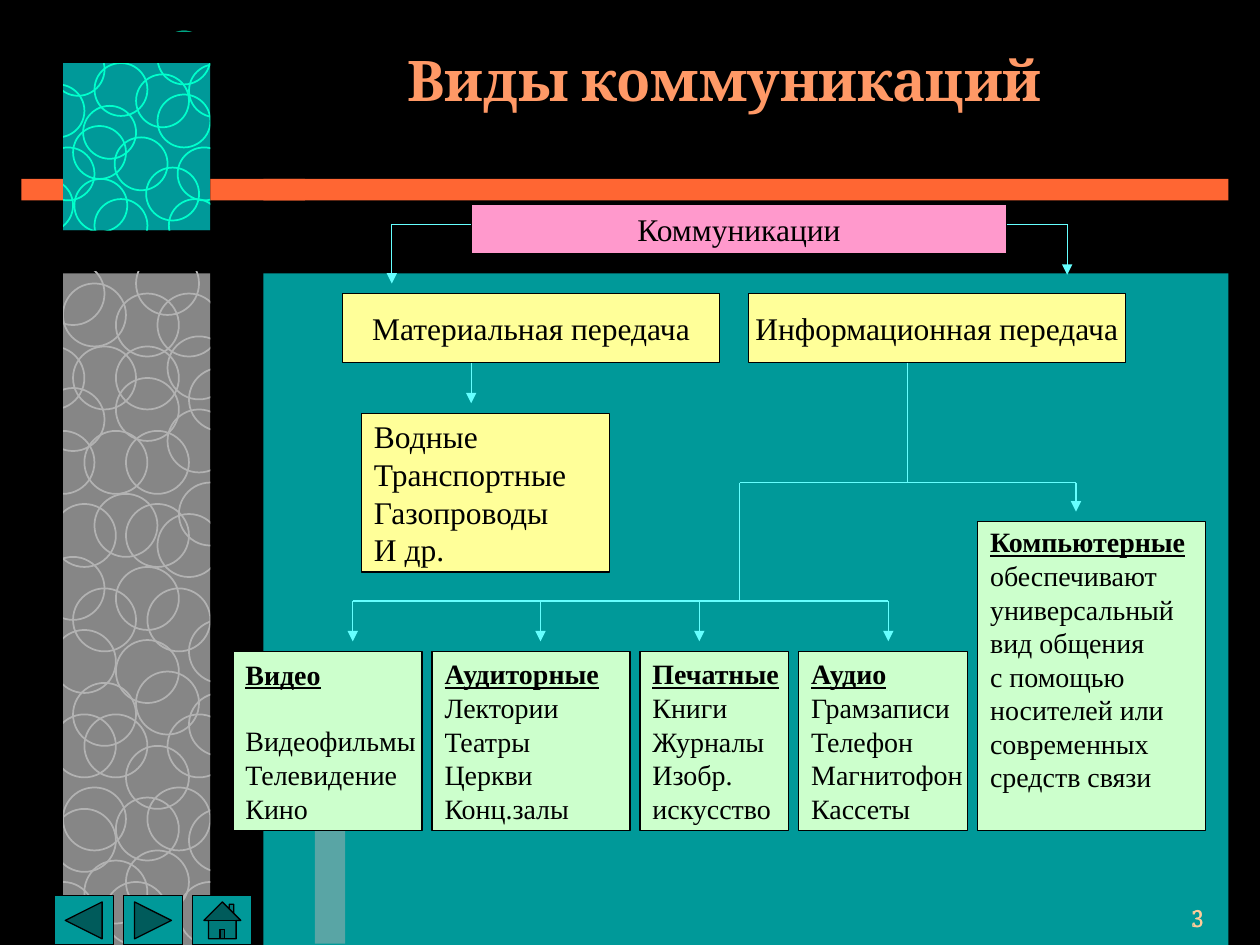
"""Build the slide «Виды коммуникаций»: a tree of communication types beside a ringed side panel."""
from dataclasses import dataclass

from lxml import etree
from pptx import Presentation, util as u
from pptx.dml.color import RGBColor
from pptx.enum import shapes, text
from pptx.oxml.ns import qn


@dataclass(frozen=True)
class Theme:
    black: str = "000000"
    teal: str = "009999"
    orange: str = "FF6633"
    grey: str = "868686"
    ring_grey: str = "B2B2B2"
    ring_mint: str = "00FFCC"
    title: str = "FF9966"
    number: str = "FFCC99"
    root: str = "FF99CC"
    branch: str = "FFFF99"
    leaf: str = "CCFFCC"
    link: str = "66FFFF"
    serif: str = "Times New Roman"
    narrow: str = "Arial Narrow"
    heading: str = "Cambria"
    title_size: int = 32
    branch_size: int = 18
    leaf_size: int = 16
    number_size: int = 14
    thin: float = 0.75
    ring_line: float = 1


THEME = Theme()
KIND = shapes.MSO_SHAPE

TITLE = "Виды коммуникаций"
PAGE_NUMBER = "3"
BRANCHES = [
    ("Коммуникации", (3.74, 1.62, 4.25, 0.39), THEME.root),
    ("Материальная передача", (2.72, 2.33, 2.99, 0.55), THEME.branch),
    ("Информационная передача", (5.94, 2.33, 2.99, 0.55), THEME.branch),
]
MATERIAL = ["Водные", "Транспортные", "Газопроводы", "И др."]
LEAVES = [
    ("Видео", ["Видеофильмы", "Телевидение", "Кино"], 1.5),
    ("Аудиторные", ["Лектории", "Театры", "Церкви", "Конц.залы"], 1.57),
    ("Печатные", ["Книги", "Журналы", "Изобр.", "искусство"], 1.18),
    ("Аудио", ["Грамзаписи", "Телефон", "Магнитофон", "Кассеты"], 1.34),
    ("Компьютерные", ["обеспечивают", "универсальный", "вид общения", "с помощью",
                      "носителей или", "современных", "средств связи"], 1.81),
]
LEAF_LEFT, LEAF_GAP, LEAF_BOTTOM = 1.85, 0.08, 6.59
LEAF_TOP, TALL_TOP = 5.17, 4.14
ROOT_Y, SPLIT_Y, BUS_Y, DROP = 1.78, 3.83, 4.77, 0.32
DROPS = [2.8, 4.29, 5.55, 7.05]

BACKDROP = [
    ((2.08, 2.17, 7.67, 5.33), THEME.teal),
    ((0.17, 1.42, 9.58, 0.17), THEME.orange),
    ((0.5, 0.5, 1.17, 1.33), THEME.teal),
    ((0.5, 2.17, 1.17, 5.33), THEME.grey),
]
MASKS = [
    ((0.33, 0.25, 1.42, 0.25), THEME.black),
    ((0.08, 0.42, 0.42, 7.08), THEME.black),
    ((0.17, 1.42, 0.33, 0.17), THEME.orange),
    ((0.33, 1.83, 1.42, 0.32), THEME.black),
    ((1.67, 0.33, 0.42, 7.17), THEME.black),
    ((1.67, 1.42, 0.75, 0.17), THEME.orange),
]
GREY_RINGS = [
    (0.33, 2.08), (0.92, 2.33), (0.58, 2.75), (1.08, 2), (0.5, 2.25), (0.42, 5), (1.33, 2.67),
    (0.92, 3), (1, 3.42), (0.67, 3.42), (0.33, 3.08), (0.42, 4), (1, 4), (0.75, 3.92),
    (0.58, 4.67), (1.42, 3.83), (1.17, 4.67), (0.92, 5.08), (1.25, 4.08), (0.33, 4.42),
    (1.33, 3.25), (0.25, 3.42), (1.08, 5.33), (0.42, 5.67), (0.67, 5.67), (0.58, 5.42),
    (1.33, 5.67), (0.42, 6.42), (0.5, 6.25), (1, 5.92), (0.92, 6.33), (1.17, 6.25),
    (0.67, 6.83), (1, 6.75), (1.42, 7), (0.83, 7), (0.25, 7), (0.92, 4.5), (1.25, 2.33),
    (0.17, 2.75), (1.5, 4.92), (1.5, 2.92), (1.5, 5.5), (1.5, 6.42), (0.92, 2.75),
]
MINT_RINGS = [
    (0.75, 0.5), (0.91, 1.09), (1.41, 1.17), (1.5, 0.51), (0.59, 1.42), (1.34, 1.58),
    (0.58, 1), (1.16, 1.33), (0.75, 1.58), (1.08, 0.59), (1.25, 0.75), (0.66, 0.84),
    (0.33, 1.17), (0.25, 0.67), (0.16, 1.42), (1.25, 0.25), (0.41, 0.34),
]
BUTTONS = [KIND.ACTION_BUTTON_BACK_OR_PREVIOUS, KIND.ACTION_BUTTON_FORWARD_OR_NEXT,
           KIND.ACTION_BUTTON_HOME]


def lengths(values):
    return [u.Cm(2.54 * value) for value in values]


def rgb(colour):
    return RGBColor.from_string(colour)


def add_box(page, frame, fill=None, line=None, width=THEME.thin, kind=KIND.RECTANGLE):
    box = page.shapes.add_shape(kind, *lengths(frame))
    box.shadow.inherit = False
    if fill:
        box.fill.solid()
        box.fill.fore_color.rgb = rgb(fill)
    else:
        box.fill.background()
    if line:
        box.line.color.rgb = rgb(line)
        box.line.width = u.Pt(width)
    else:
        box.line.fill.background()
    return box


def write(box, lines, size, colour=THEME.black, font=THEME.serif,
          align=text.PP_ALIGN.LEFT, headed=False, wrap=False):
    body = box.text_frame
    body.word_wrap = wrap
    body.vertical_anchor = text.MSO_ANCHOR.MIDDLE
    for index, line in enumerate(lines):
        para = body.add_paragraph() if index else body.paragraphs[0]
        para.alignment = align
        span = para.add_run()
        span.text = line
        span.font.size = u.Pt(size)
        span.font.name = font
        span.font.color.rgb = rgb(colour)
        span.font.bold = span.font.underline = headed and index == 0
    return body


def add_link(page, start, end, arrow=False):
    link = page.shapes.add_connector(shapes.MSO_CONNECTOR.STRAIGHT, *lengths(start + end))
    link.line.color.rgb = rgb(THEME.link)
    link.line.width = u.Pt(THEME.thin)
    if arrow:
        etree.SubElement(link.line._get_or_add_ln(), qn("a:tailEnd"), type="triangle")
    etree.SubElement(link._element.spPr, qn("a:effectLst"))


def add_panel(page):
    for frame, fill in BACKDROP:
        add_box(page, frame, fill)
    for rings, size, colour in [(GREY_RINGS, 0.5, THEME.ring_grey),
                                (MINT_RINGS, 0.42, THEME.ring_mint)]:
        for left, top in rings:
            add_box(page, (left, top, size, size), None, colour, THEME.ring_line, KIND.OVAL)
    for frame, fill in MASKS:
        add_box(page, frame, fill)
    strip = add_box(page, (2.5, 6.59, 0.24, 0.9), THEME.ring_grey)
    tint = strip._element.spPr.find(qn("a:solidFill"))[0]
    etree.SubElement(tint, qn("a:alpha"), val="50000")


def add_tree(page):
    for label, frame, fill in BRANCHES:
        box = add_box(page, frame, fill, THEME.black)
        write(box, [label], THEME.branch_size, align=text.PP_ALIGN.CENTER)
    write(add_box(page, (2.87, 3.28, 1.97, 1.26), THEME.branch, THEME.black),
          MATERIAL, THEME.branch_size)
    left = LEAF_LEFT
    for head, items, width in LEAVES:
        tall = len(items) > 4
        top = TALL_TOP if tall else LEAF_TOP
        box = add_box(page, (left, top, width, LEAF_BOTTOM - top), THEME.leaf, THEME.black)
        body = write(box, [head] + items, THEME.leaf_size, headed=True)
        if tall:
            body.margin_bottom = u.Cm(0.8)
        if len(items) < 4:
            body.paragraphs[0].space_after = u.Pt(19)
        left += width + LEAF_GAP


def add_links(page):
    for start, end in [((3.74, ROOT_Y), (3.11, ROOT_Y)), ((7.99, ROOT_Y), (8.47, ROOT_Y)),
                       ((DROPS[0], BUS_Y), (DROPS[-1], BUS_Y)),
                       ((5.87, SPLIT_Y), (8.54, SPLIT_Y)),
                       ((5.87, SPLIT_Y), (5.87, BUS_Y)), ((7.2, 2.88), (7.2, SPLIT_Y))]:
        add_link(page, start, end)
    arrows = [(3.11, ROOT_Y, 0.47), (8.47, ROOT_Y, 0.4), (3.74, 2.88, DROP),
              (8.54, SPLIT_Y, 0.23)] + [(x, BUS_Y, DROP) for x in DROPS]
    for x, y, length in arrows:
        add_link(page, (x, y), (x, y + length), arrow=True)


def main():
    deck = Presentation()
    deck.slide_width, deck.slide_height = lengths((10, 7.5))
    page = deck.slides.add_slide(deck.slide_layouts[6])
    page.background.fill.solid()
    page.background.fill.fore_color.rgb = rgb(THEME.black)
    add_panel(page)
    for font in (THEME.narrow, THEME.serif):
        box = page.shapes.add_textbox(*lengths((8.28, 7.08, 1.37, 0.41)))
        write(box, [PAGE_NUMBER], THEME.number_size, THEME.number, font, text.PP_ALIGN.RIGHT)
    add_tree(page)
    add_links(page)
    for index, kind in enumerate(BUTTONS):
        add_box(page, (0.43 + 0.55 * index, 7.11, 0.47, 0.39), THEME.teal, THEME.black, kind=kind)
    box = page.shapes.add_textbox(*lengths((1.5, 0, 8.5, 1.25)))
    write(box, [TITLE], THEME.title_size, THEME.title, THEME.heading,
          text.PP_ALIGN.CENTER, headed=True, wrap=True)
    box.text_frame.paragraphs[0].runs[0].font.underline = False
    deck.save("out.pptx")


if __name__ == "__main__":
    main()
